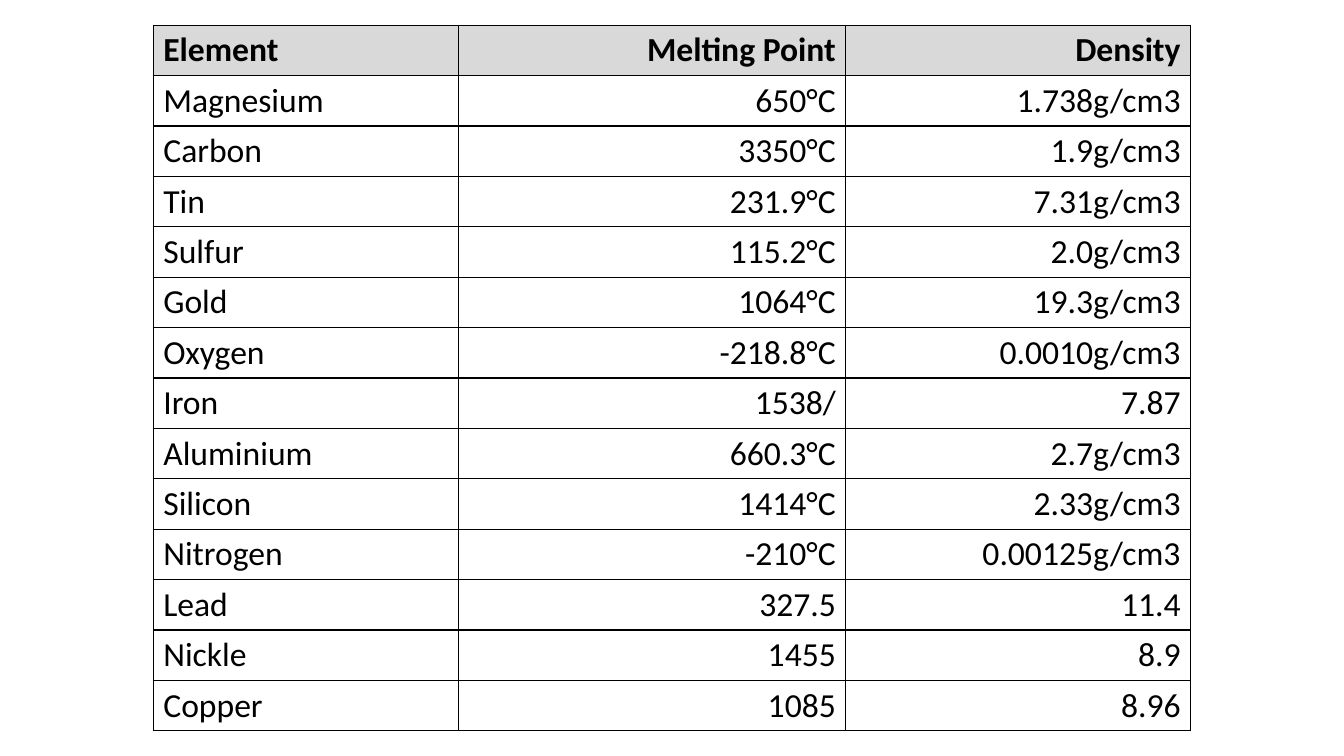
import pptx
import pptx.util
from dataclasses import dataclass
from lxml import etree
from pptx.dml.color import RGBColor
from pptx.enum.text import MSO_ANCHOR, PP_ALIGN
from pptx.oxml.ns import qn
from pptx.util import Inches


@dataclass(frozen=True)
class Theme:
    font: str = "Calibri"
    text_size: int = 24
    text_color: str = "000000"
    header_fill: str = "D9D9D9"
    border_color: str = "000000"
    border_width: float = 1


HEADER = ("Element", "Melting Point", "Density")
ELEMENTS = [
    ("Magnesium", "650°C", "1.738g/cm3"),
    ("Carbon", "3350°C", "1.9g/cm3"),
    ("Tin", "231.9°C", "7.31g/cm3"),
    ("Sulfur", "115.2°C", "2.0g/cm3"),
    ("Gold", "1064°C", "19.3g/cm3"),
    ("Oxygen", "-218.8°C", "0.0010g/cm3"),
    ("Iron", "1538/", "7.87"),
    ("Aluminium", "660.3°C", "2.7g/cm3"),
    ("Silicon", "1414°C", "2.33g/cm3"),
    ("Nitrogen", "-210°C", "0.00125g/cm3"),
    ("Lead", "327.5", "11.4"),
    ("Nickle", "1455", "8.9"),
    ("Copper", "1085", "8.96"),
]


def write_text(text_frame, text, *, theme, bold=False, align=PP_ALIGN.LEFT):
    paragraph = text_frame.paragraphs[0]
    paragraph.alignment = align
    run = paragraph.add_run()
    run.text = text
    run.font.name = theme.font
    run.font.size = pptx.util.Pt(theme.text_size)
    run.font.bold = bold
    run.font.color.rgb = RGBColor.from_string(theme.text_color)


class SlideBuilder:
    def __init__(self, slide, theme):
        self.slide = slide
        self.theme = theme

    def add_borders(self, cell):
        properties = cell._tc.get_or_add_tcPr()
        width = str(pptx.util.Pt(self.theme.border_width))
        # Borders come before the fill in the cell properties
        for position, side in enumerate(("lnL", "lnR", "lnT", "lnB")):
            line = etree.Element(qn(f"a:{side}"), w=width)
            fill = etree.SubElement(line, qn("a:solidFill"))
            etree.SubElement(fill, qn("a:srgbClr"), val=self.theme.border_color)
            properties.insert(position, line)

    def add_cell(self, cell, text, is_header, align):
        cell.margin_top = cell.margin_bottom = Inches(0.04)
        cell.vertical_anchor = MSO_ANCHOR.MIDDLE
        if is_header:
            cell.fill.solid()
            cell.fill.fore_color.rgb = RGBColor.from_string(self.theme.header_fill)
        else:
            cell.fill.background()
        self.add_borders(cell)
        write_text(cell.text_frame, text, theme=self.theme, bold=is_header, align=align)

    def add_table(self, rows, left, top, column_widths, row_height):
        shape = self.slide.shapes.add_table(
            len(rows), len(column_widths), Inches(left), Inches(top),
            Inches(sum(column_widths)), Inches(row_height * len(rows)))
        table = shape.table
        table.horz_banding = False
        for column, width in zip(table.columns, column_widths):
            column.width = Inches(width)
        for row_index, values in enumerate(rows):
            table.rows[row_index].height = Inches(row_height)
            for column_index, text in enumerate(values):
                align = PP_ALIGN.RIGHT if column_index else PP_ALIGN.LEFT
                self.add_cell(table.cell(row_index, column_index), text,
                              is_header=row_index == 0, align=align)


def main():
    presentation = pptx.Presentation()
    presentation.slide_width = Inches(13.33)
    presentation.slide_height = Inches(7.5)
    slide = presentation.slides.add_slide(presentation.slide_layouts[6])

    # Table of element properties
    builder = SlideBuilder(slide, Theme())
    builder.add_table([HEADER, *ELEMENTS], left=1.52, top=0.25,
                      column_widths=(3.03, 3.84, 3.42), row_height=0.5)

    presentation.save("out.pptx")


if __name__ == "__main__":
    main()
